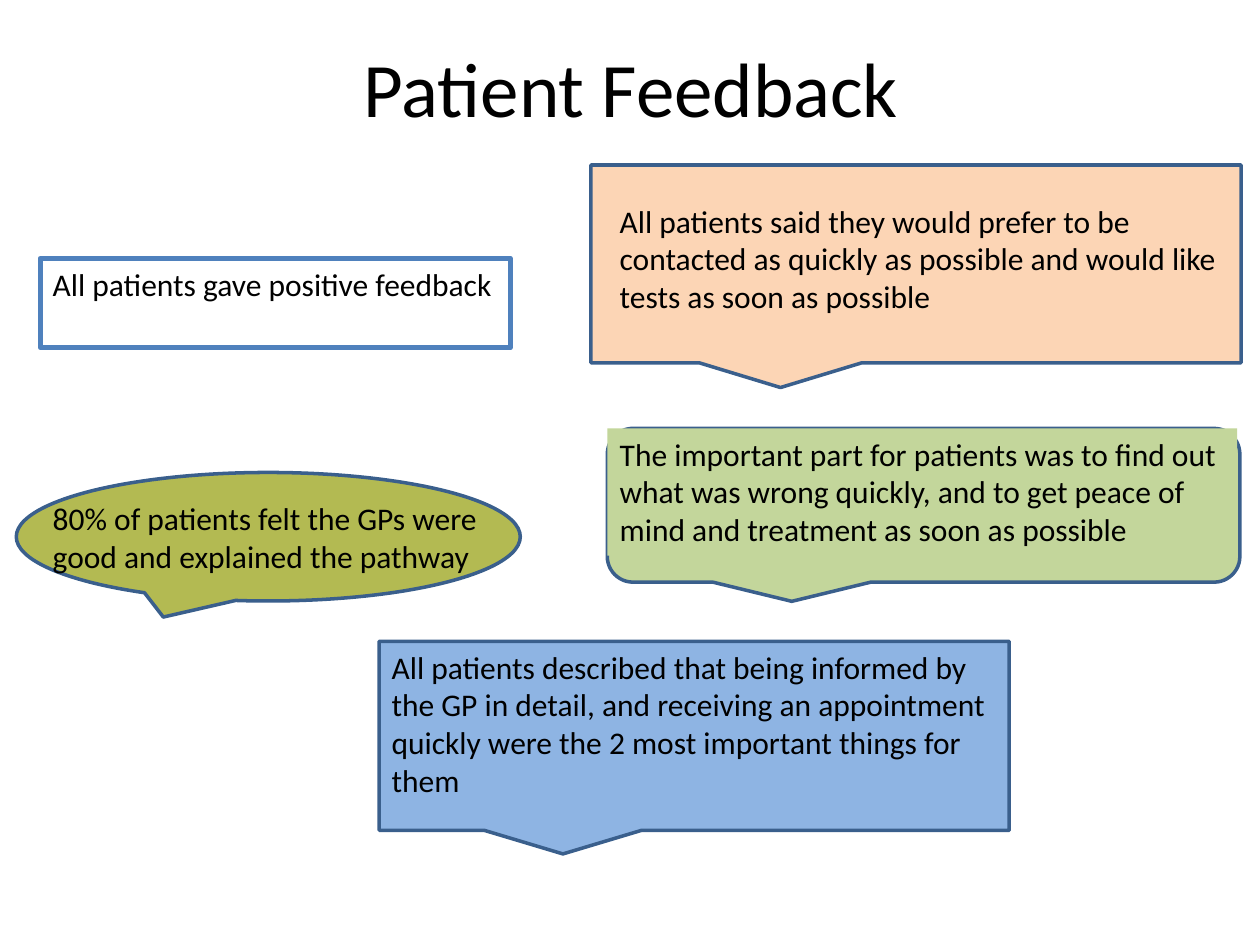
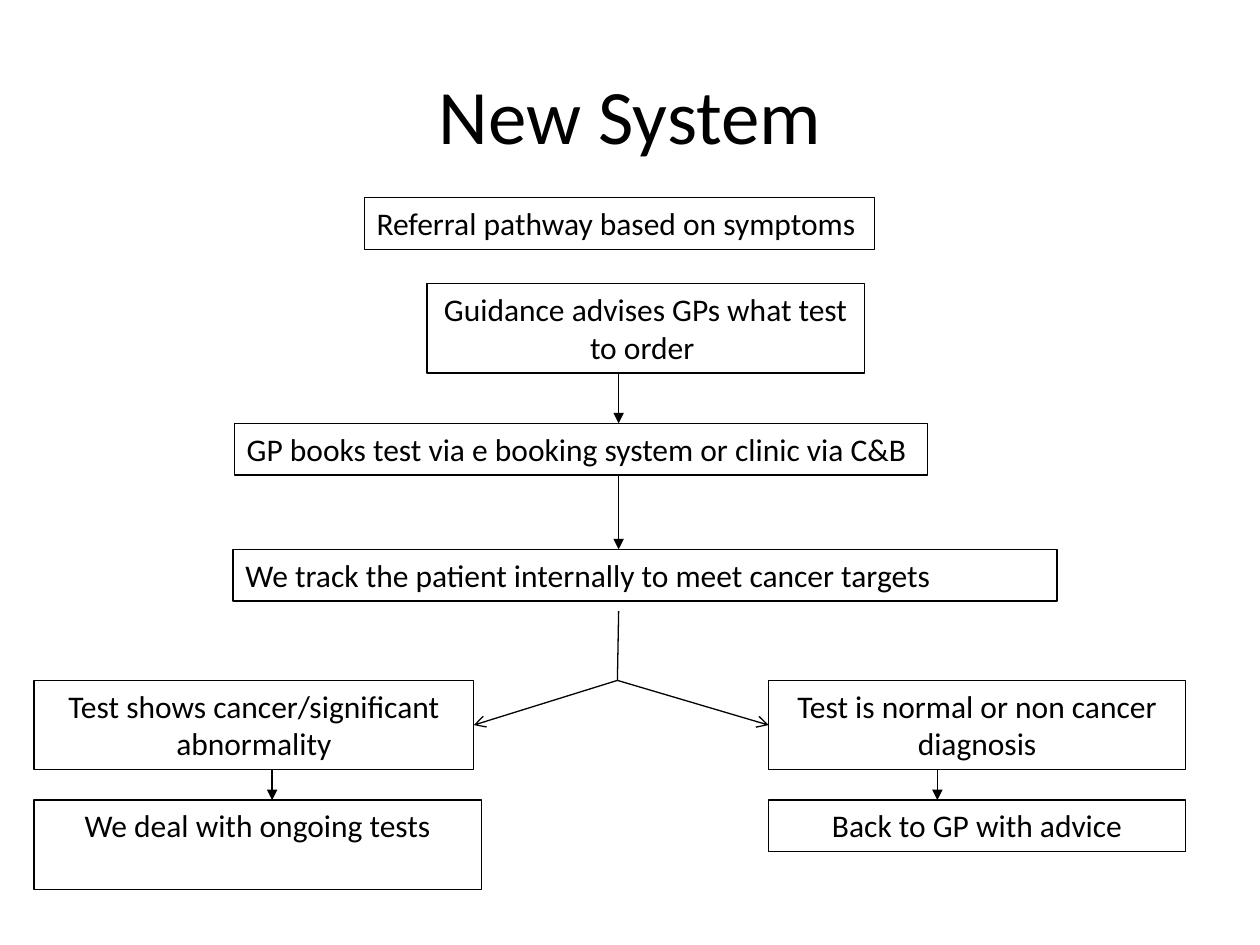
from collections import namedtuple
from dataclasses import dataclass

from pptx import Presentation
from pptx import util as u
from pptx.dml.color import RGBColor
from pptx.enum import shapes, text
from pptx.oxml import parse_xml
from pptx.oxml.ns import nsdecls

COLUMNS, ROWS = 100, 75
WIDTH, HEIGHT = u.Inches(10), u.Inches(7.5)
Box = namedtuple("Box", "left top width height")
Kind = shapes.MSO_SHAPE
Align = text.PP_ALIGN


@dataclass(frozen=True)
class Theme:
    """Colours, type sizes and line widths shared by both slides."""
    font: str = "Calibri"
    ink: str = "000000"
    callout_line: str = "3A5F8C"
    accent: str = "4F81BD"
    peach: str = "FCD5B5"
    green: str = "C3D69B"
    olive: str = "B3BA52"
    blue: str = "8EB4E3"
    title_size: float = 44
    body_size: float = 18
    thin: float = 0.75
    medium: float = 2
    thick: float = 3


THEME = Theme()


def across(columns):
    """Turn grid columns into a length."""
    return round(columns * WIDTH / COLUMNS)


def down(rows):
    """Turn grid rows into a length."""
    return round(rows * HEIGHT / ROWS)


def place(box):
    """Turn a grid box into left, top, width and height."""
    return across(box.left), down(box.top), across(box.width), down(box.height)


def write(shape, words, size=THEME.body_size, align=Align.LEFT,
          anchor=text.MSO_ANCHOR.TOP):
    """Write one formatted paragraph into a shape."""
    frame = shape.text_frame
    frame.word_wrap = True
    frame.vertical_anchor = anchor
    paragraph = frame.paragraphs[0]
    paragraph.alignment = align
    run = paragraph.add_run()
    run.text = words
    run.font.name = THEME.font
    run.font.size = u.Pt(size)
    run.font.color.rgb = RGBColor.from_string(THEME.ink)


def add_title(slide, words, box):
    """Add a centred slide title."""
    write(slide.shapes.add_textbox(*place(box)), words, size=THEME.title_size,
          align=Align.CENTER, anchor=text.MSO_ANCHOR.MIDDLE)


def add_outline(slide, kind, box, fill=None, line=None, weight=THEME.thin):
    """Add a preset shape with an optional fill and line."""
    shape = slide.shapes.add_shape(kind, *place(box))
    shape.shadow.inherit = False
    if fill:
        shape.fill.solid()
        shape.fill.fore_color.rgb = RGBColor.from_string(fill)
    else:
        shape.fill.background()
    if line:
        shape.line.color.rgb = RGBColor.from_string(line)
        shape.line.width = u.Pt(weight)
    else:
        shape.line.fill.background()
    return shape


def add_callout(slide, kind, box, fill, words, words_box, panel=None):
    """Add a speech callout with its words laid over it."""
    add_outline(slide, kind, box, fill, THEME.callout_line, THEME.medium)
    write(add_outline(slide, Kind.RECTANGLE, words_box, panel), words)


def add_step(slide, box, words, align=Align.CENTER, line=THEME.ink,
             weight=THEME.thin):
    """Add an outlined box of text and return its grid box."""
    shape = add_outline(slide, Kind.RECTANGLE, box, line=line, weight=weight)
    write(shape, words, align=align)
    return box


def add_line(slide, start, end, head=None):
    """Add a thin line between grid points, with an arrowhead if named."""
    connector = slide.shapes.add_connector(
        shapes.MSO_CONNECTOR.STRAIGHT, across(start[0]), down(start[1]),
        across(end[0]), down(end[1]))
    connector.line.color.rgb = RGBColor.from_string(THEME.ink)
    connector.line.width = u.Pt(THEME.thin)
    if head:
        connector.line._get_or_add_ln().append(
            parse_xml(f'<a:tailEnd {nsdecls("a")} type="{head}"/>'))
    connector._element.spPr.append(parse_xml(f'<a:effectLst {nsdecls("a")}/>'))


def add_drop(slide, upper, lower, column):
    """Join two stacked steps with a downward arrow."""
    add_line(slide, (column, upper.top + upper.height), (column, lower.top),
             head="triangle")


def build_feedback(slide):
    """Build the patient feedback slide."""
    add_callout(slide, Kind.RECTANGULAR_CALLOUT, Box(46.9, 13.1, 51.6, 15.7),
                THEME.peach,
                "All patients said they would prefer to be contacted as quickly "
                "as possible and would like tests as soon as possible",
                Box(48.2, 15.5, 50, 10.1))
    add_callout(slide, Kind.ROUNDED_RECTANGULAR_CALLOUT,
                Box(48.2, 34, 50.2, 12.2), THEME.green,
                "The important part for patients was to find out what was wrong "
                "quickly, and to get peace of mind and treatment as soon as "
                "possible",
                Box(48.2, 34, 50, 10.1), panel=THEME.green)
    add_callout(slide, Kind.OVAL_CALLOUT, Box(1.3, 37.5, 40, 10.2), THEME.olive,
                "80% of patients felt the GPs were good and explained the pathway",
                Box(3.2, 39.1, 37, 7.1))
    add_callout(slide, Kind.RECTANGULAR_CALLOUT, Box(30.1, 50.9, 50, 15),
                THEME.blue,
                "All patients described that being informed by the GP in detail, "
                "and receiving an appointment quickly were the 2 most important "
                "things for them",
                Box(30.1, 50.9, 50, 13.1))
    add_step(slide, Box(3.2, 20.5, 37.3, 7.1),
             "All patients gave positive feedback", align=Align.LEFT,
             line=THEME.accent, weight=THEME.thick)
    add_title(slide, "Patient Feedback", Box(5.1, 0.6, 90, 12.5))


def build_system(slide):
    """Build the new system flow chart slide."""
    one_line, two_lines = 4.1, 7.1
    middle, left, right = 49.1, 2.7, 61
    result_top, outcome_top = 54, 63.5

    add_step(slide, Box(28.9, 15.7, 40.5, one_line),
             "Referral pathway based on symptoms", align=Align.LEFT)
    guidance = add_step(slide, Box(33.9, 22.5, 34.7, two_lines),
                        "Guidance advises GPs what test to order ")
    booking = add_step(slide, Box(18.6, 33.6, 55, one_line),
                       "GP books test via e booking system or clinic via C&B",
                       align=Align.LEFT)
    tracking = add_step(slide, Box(18.5, 43.6, 65.4, one_line),
                        "We track the patient internally to meet cancer targets",
                        align=Align.LEFT)
    cancer = add_step(slide, Box(left, result_top, 34.9, two_lines),
                      "Test shows cancer/significant abnormality")
    normal = add_step(slide, Box(right, result_top, 33.1, two_lines),
                      "Test is normal or non cancer diagnosis")
    ongoing = add_step(slide, Box(left, outcome_top, 35.5, two_lines),
                       "We deal with ongoing tests")
    advice = add_step(slide, Box(right, outcome_top, 33.1, one_line),
                      "Back to GP with advice")

    for upper, lower, column in ((guidance, booking, middle),
                                 (booking, tracking, middle),
                                 (cancer, ongoing, 21.6),
                                 (normal, advice, 74.4)):
        add_drop(slide, upper, lower, column)

    fork = (49, result_top)
    result_middle = result_top + two_lines / 2
    add_line(slide, (middle, 48.5), fork)
    for edge in (cancer.left + cancer.width, normal.left):
        add_line(slide, fork, (edge, result_middle), head="arrow")
    add_title(slide, "New System", Box(5, 2.8, 90, 12.5))


def main():
    """Build both slides and save the presentation."""
    presentation = Presentation()
    presentation.slide_width, presentation.slide_height = WIDTH, HEIGHT
    blank = presentation.slide_layouts[6]
    for build in (build_feedback, build_system):
        build(presentation.slides.add_slide(blank))
    presentation.save("out.pptx")


if __name__ == "__main__":
    main()
